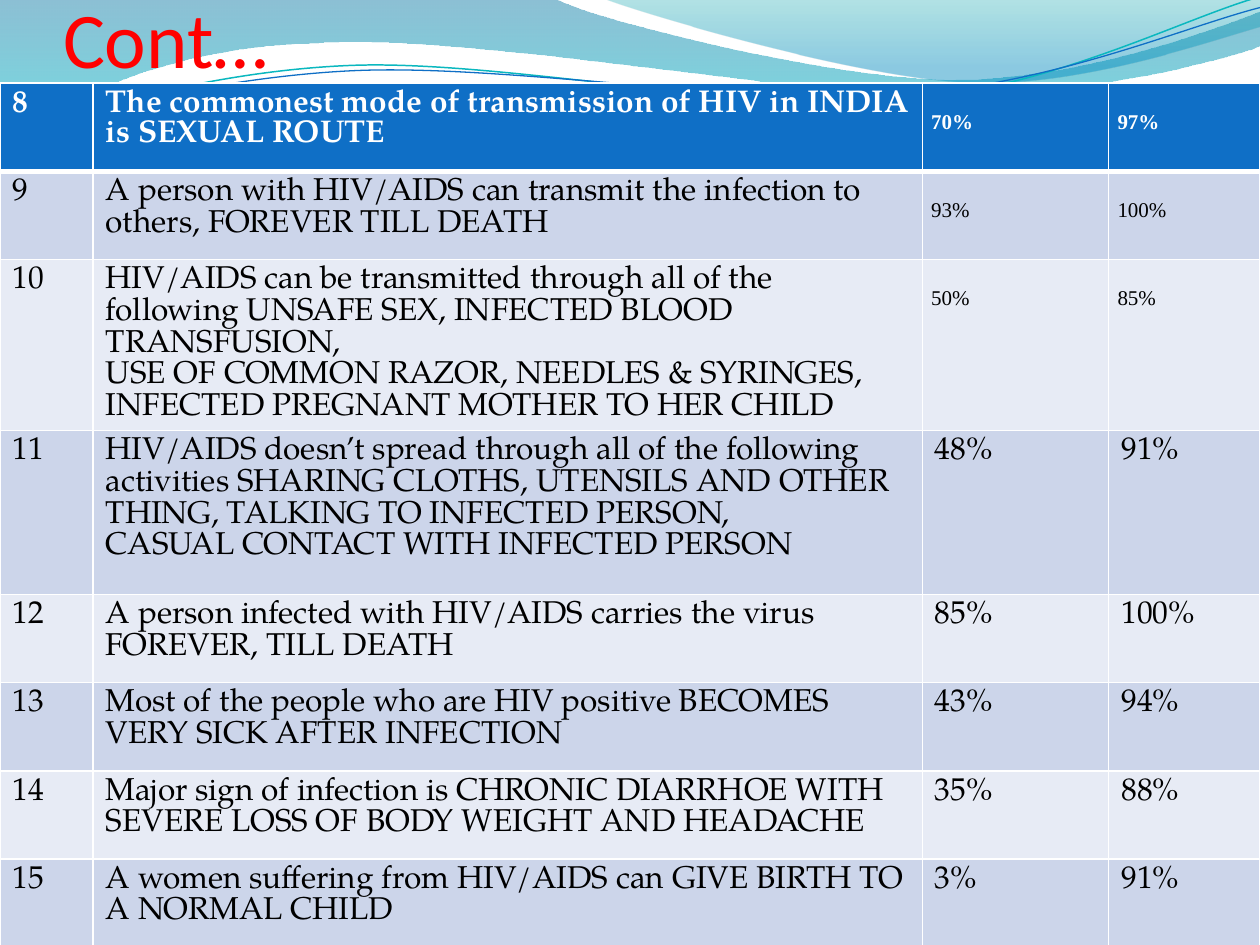
from dataclasses import dataclass
from math import cos, radians, sin

from lxml import etree
from pptx import Presentation
from pptx.dml.color import RGBColor
from pptx.enum.text import MSO_ANCHOR, PP_ALIGN
from pptx.oxml.ns import qn
from pptx.util import Inches, Pt

BOTTOM = MSO_ANCHOR.BOTTOM
LEFT = PP_ALIGN.LEFT
TITLE_ONLY = 5


@dataclass(frozen=True)
class Theme:
    """Colours, fonts and type sizes of the slide."""
    title_color: str = "FF0000"
    header: str = "0F6FC6"
    header_text: str = "FFFFFF"
    body_text: str = "000000"
    border: str = "FFFFFF"
    bands: tuple = ("E7EBF5", "CCD5EA")
    teal_line: str = "0AB8BF"
    title_font: str = "Calibri"
    body_font: str = "TeX Gyre Pagella"
    small_font: str = "Times New Roman"
    title_size: int = 45
    body_size: int = 18
    small_size: int = 12


THEME = Theme()
SMALL_ROWS = 3
COLUMNS = (0.74, 6.58, 1.48, 1.2)
ROWS = (0.7, 0.7, 1.34, 1.3, 0.7, 0.7, 0.7, 0.7)
HEADER_BORDERS = (("a:lnL", 1), ("a:lnR", 1), ("a:lnT", 1), ("a:lnB", 3))
RESPONSES = (
    ("8", "The commonest mode of transmission of HIV in INDIA is SEXUAL ROUTE", "70%", "97%"),
    ("9", "A person with HIV/AIDS can transmit the infection to others, FOREVER TILL DEATH",
     "93%", "100%"),
    ("10", "HIV/AIDS can be transmitted through all of the following UNSAFE SEX, "
     "INFECTED BLOOD TRANSFUSION,\nUSE OF COMMON RAZOR, NEEDLES & SYRINGES, "
     "INFECTED PREGNANT MOTHER TO HER CHILD", "50%", "85%"),
    ("11", "HIV/AIDS doesn’t spread through all of the following activities SHARING CLOTHS, "
     "UTENSILS AND OTHER THING, TALKING TO INFECTED PERSON,\n"
     "CASUAL CONTACT WITH INFECTED PERSON", "48%", "91%"),
    ("12", "A person infected with HIV/AIDS carries the virus FOREVER, TILL DEATH",
     "85%", "100%"),
    ("13", "Most of the people who are HIV positive BECOMES VERY SICK AFTER INFECTION",
     "43%", "94%"),
    ("14", "Major sign of infection is CHRONIC DIARRHOE WITH SEVERE LOSS OF BODY WEIGHT "
     "AND HEADACHE", "35%", "88%"),
    ("15", "A women suffering from HIV/AIDS can GIVE BIRTH TO A NORMAL CHILD", "3%", "91%"),
)

BROAD_WAVE = (
    (0, 0), (4.4, -0.01),
    (4.76, 0.17, 6.64, 0.63, 7.58, 0.63), (8.53, 0.63, 9.58, 0.26, 10, 0.09),
    (10.01, 0.36),
    (9.83, 0.44, 8.7, 0.76, 7.46, 0.75), (6.22, 0.75, 3.82, 0.28, 2.57, 0.34),
    (1.29, 0.36, 0.46, 0.83, -0.01, 1.13), (0, 0),
)
CORNER_WAVE = (
    (4.79, -0.01),
    (5.09, 0.11, 6.82, 0.62, 7.69, 0.65), (8.56, 0.69, 9.61, 0.32, 10, 0.21),
    (10, 0), (4.79, -0.01),
)
TEAL_CURVE = (
    (0, 1.11), (0.48, 0.93, 1.58, 0.57, 2.77, 0.52),
    (3.95, 0.47, 5.93, 0.89, 7.13, 0.8), (8.33, 0.71, 9.38, 0.15, 9.98, -0.02),
)
BLUE_CURVE = (
    (0, 1.04), (0.47, 0.96, 1.64, 0.61, 2.83, 0.56),
    (4.03, 0.51, 5.97, 0.84, 7.17, 0.75), (8.36, 0.67, 9.41, 0.21, 10, 0.06),
)
CURVE_CENTER = (4.99, 0.58)
CURVE_TILT = -2.7


def rgb(value):
    """Turn a hex string into a colour."""
    return RGBColor.from_string(value)


def pairs(segment):
    """Split a flat segment into its points."""
    return list(zip(segment[::2], segment[1::2]))


def level(segments):
    """Turn tilted segments back to level around the centre of the curves."""
    center_x, center_y = CURVE_CENTER
    c, s = cos(radians(-CURVE_TILT)), sin(radians(-CURVE_TILT))
    return [
        [value for x, y in pairs(segment) for value in (
            center_x + (x - center_x) * c - (y - center_y) * s,
            center_y + (x - center_x) * s + (y - center_y) * c)]
        for segment in segments
    ]


def add_outline(slide, origin, segments, close):
    """Draw straight (2 numbers) and cubic (6 numbers) segments from the origin."""
    left, top = origin
    placed = [[(Inches(left + x), Inches(top + y)) for x, y in pairs(segment)]
              for segment in segments]
    builder = slide.shapes.build_freeform(*placed[0][-1])
    builder.add_line_segments([points[-1] for points in placed[1:]], close=close)
    outline = builder.convert_to_shape()
    outline.shadow.inherit = False
    steps = list(outline._element.spPr.iter(qn("a:lnTo")))
    for step, points in zip(steps, placed[1:]):
        if len(points) == 3:
            cubic = etree.Element(qn("a:cubicBezTo"))
            for x, y in points:
                etree.SubElement(cubic, qn("a:pt"), x=str(x - outline.left),
                                 y=str(y - outline.top))
            step.getparent().replace(step, cubic)
    return outline


def add_wave(slide, origin, segments, stops):
    """Fill a wave with a translucent top-to-bottom gradient."""
    wave = add_outline(slide, origin, segments, True)
    wave.line.fill.background()
    wave.fill.gradient()
    wave.fill.gradient_angle = 270
    for stop, (position, color, _) in zip(wave.fill.gradient_stops, stops):
        stop.position = position
        stop.color.rgb = rgb(color)
    colors = list(wave._element.spPr.iter(qn("a:srgbClr")))
    for color, (_, _, opacity) in zip(colors, stops):
        etree.SubElement(color, qn("a:alpha"), val=str(opacity * 1000))


def add_curve(slide, origin, segments, color, width):
    """Draw an open, tilted curve without fill."""
    curve = add_outline(slide, origin, level(segments), False)
    curve.rotation = CURVE_TILT
    curve.fill.background()
    curve.line.color.rgb = rgb(color)
    curve.line.width = Pt(width)


def add_banner(slide, origin):
    """Place the waves and curves along the top of the slide."""
    add_wave(slide, origin, BROAD_WAVE, ((0, "0074A1", 45), (1, "00C6CF", 55)))
    add_wave(slide, origin, CORNER_WAVE, ((0, "00A1A9", 30), (0.8, "008BBF", 45)))
    add_curve(slide, origin, TEAL_CURVE, THEME.teal_line, 0.85)
    add_curve(slide, origin, BLUE_CURVE, THEME.header, 0.75)


def set_font(paragraph, name, size, color, bold=False):
    """Format a whole paragraph."""
    font = paragraph.font
    font.name, font.size, font.bold = name, Pt(size), bold
    font.color.rgb = rgb(color)


def place_title(slide, box, text):
    """Move the title into its box, in front of the banner."""
    title = slide.shapes.title
    title.left, title.top, title.width, title.height = map(Inches, box)
    slide.shapes._spTree.append(title._element)
    frame = title.text_frame
    frame.text = text
    frame.vertical_anchor = BOTTOM
    frame.margin_left = frame.margin_right = frame.margin_bottom = 0
    frame.margin_top = Inches(0.05)
    paragraph = frame.paragraphs[0]
    paragraph.alignment = LEFT
    set_font(paragraph, THEME.title_font, THEME.title_size, THEME.title_color)


def add_header_borders(cell):
    """Frame a header cell, with a heavier rule below."""
    properties = cell._tc.get_or_add_tcPr()
    for index, (tag, width) in enumerate(HEADER_BORDERS):
        border = etree.Element(qn(tag), w=str(Pt(width)))
        fill = etree.SubElement(border, qn("a:solidFill"))
        etree.SubElement(fill, qn("a:srgbClr"), val=THEME.border)
        properties.insert(index, border)


def fill_cell(cell, text, row, column):
    """Write one answer cell with the style of its row and column."""
    is_header = row == 0
    is_small = row < SMALL_ROWS and column >= 2
    cell.fill.solid()
    cell.fill.fore_color.rgb = rgb(THEME.header if is_header else THEME.bands[row % 2])
    if is_header:
        add_header_borders(cell)
    cell.text = text
    if is_small:
        cell.margin_left = cell.margin_right = Inches(0.07)
        cell.margin_top, cell.margin_bottom = Inches(0.19), 0
    for paragraph in cell.text_frame.paragraphs:
        if is_small:
            paragraph.line_spacing = 1.15
        set_font(paragraph,
                 THEME.small_font if is_small else THEME.body_font,
                 THEME.small_size if is_small else THEME.body_size,
                 THEME.header_text if is_header else THEME.body_text, is_header)


def add_responses(slide, box):
    """Place the table of statements and percentages."""
    table = slide.shapes.add_table(len(ROWS), len(COLUMNS), *map(Inches, box)).table
    for column, width in zip(table.columns, COLUMNS):
        column.width = Inches(width)
    for index, (row, height) in enumerate(zip(table.rows, ROWS)):
        row.height = Inches(height)
        for column, (cell, text) in enumerate(zip(row.cells, RESPONSES[index])):
            fill_cell(cell, text, index, column)


def main():
    """Build the slide and save it."""
    deck = Presentation()
    deck.slide_width, deck.slide_height = Inches(10), Inches(7.5)
    slide = deck.slides.add_slide(deck.slide_layouts[TITLE_ONLY])
    add_banner(slide, (0, 0))
    place_title(slide, (0.5, 0.25, 9, 0.42), "Cont…")
    add_responses(slide, (0, 0.66, sum(COLUMNS), sum(ROWS)))
    deck.save("out.pptx")


if __name__ == "__main__":
    main()
